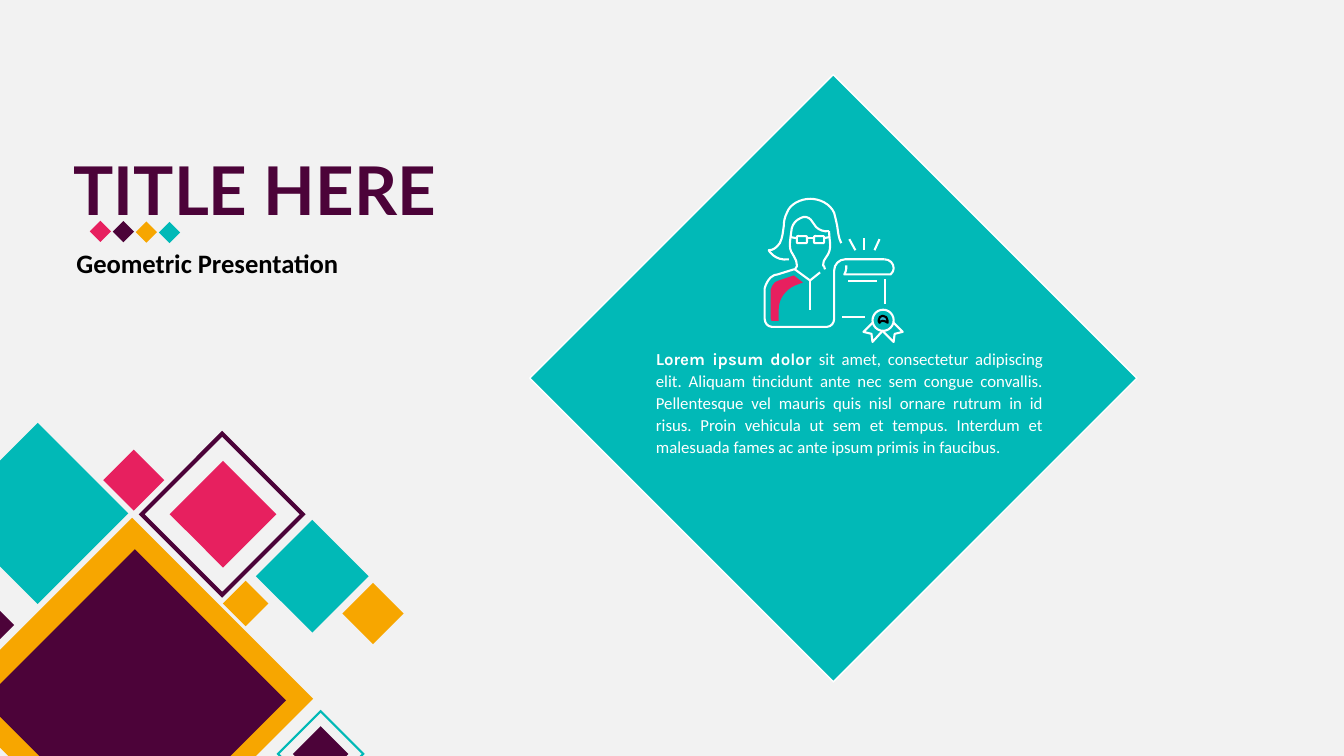
from dataclasses import dataclass

from lxml import etree
from pptx import Presentation
from pptx.dml.color import RGBColor
from pptx.enum.shapes import MSO_CONNECTOR, MSO_SHAPE
from pptx.enum.text import MSO_ANCHOR, MSO_AUTO_SIZE, PP_ALIGN
from pptx.oxml.ns import qn
from pptx.util import Cm, Pt

SQUARE, LENS, MEDAL = MSO_SHAPE.RECTANGLE, MSO_SHAPE.ROUNDED_RECTANGLE, MSO_SHAPE.OVAL
STRAIGHT = MSO_CONNECTOR.STRAIGHT
TOP, GROW = MSO_ANCHOR.TOP, MSO_AUTO_SIZE.SHAPE_TO_FIT_TEXT
LEFT, JUSTIFY = PP_ALIGN.LEFT, PP_ALIGN.JUSTIFY


@dataclass(frozen=True)
class Theme:
    paper: str = "F2F2F2"
    plum: str = "4C0339"
    teal: str = "01B9B7"
    amber: str = "F7A600"
    pink: str = "E7205F"
    white: str = "FFFFFF"
    black: str = "000000"
    seal: str = "35B4CF"
    title_size: float = 48
    subtitle_size: float = 19
    caption_size: float = 12
    hairline: float = 1
    stroke: float = 1.5
    frame: float = 3


THEME = Theme()
ICON_UNITS = 137  # width of the icon's drawing grid
# Icon outlines on the grid: a pair is a corner, six numbers are a Bézier curve
ICON_STROKES = [
    # right side of the face, hair on both sides, collar
    [(64, 32), (64, 37, 65, 42, 65, 46), (65, 51, 64, 54, 61, 58), (59, 60, 58, 63, 58, 66), (59, 67),
     (59, 68, 59, 69, 60, 70)],
    [(45, 0), (55, 0, 65, 5, 69, 14), (70, 18, 71, 22, 72, 27), (73, 33, 73, 38, 76, 44)],
    [(45, 0), (36, 0, 25, 5, 22, 14), (20, 18, 19, 22, 19, 27), (18, 33, 18, 38, 15, 44),
     (12, 48, 9, 51, 4, 51), (4, 51, 10, 62, 24, 60)],
    [(30, 70), (45, 81), (55, 73)],
    # fringe, left side of the face, body and top of the scroll
    [(64, 32), (59, 33, 54, 31, 51, 28), (49, 26, 48, 23, 46, 21), (44, 18, 39, 17, 36, 19),
     (31, 21, 28, 25, 27, 29), (26, 35, 25, 42, 25, 46), (25, 51, 27, 54, 29, 57), (31, 60, 32, 63, 32, 66),
     (32, 67), (31, 68, 31, 69, 30, 70), (29, 70), (13, 75), (11, 75, 8, 76, 6, 78), (3, 81, 1, 85, 0, 89),
     (0, 119), (0, 123, 3, 127, 7, 127), (62, 127), (66, 127, 69, 123, 69, 119), (69, 71),
     (69, 65, 74, 60, 80, 60), (119, 60)],
    # ribbons and scroll
    [(117, 131), (107, 142), (106, 134), (98, 132), (107, 123)],
    [(117, 131), (128, 142), (129, 134), (137, 132), (128, 123)],
    [(119, 60), (124, 60, 128, 64, 128, 69), (128, 71, 127, 73, 125, 75), (79, 75), (80, 73, 81, 71, 81, 69),
     (81, 68, 81, 67, 81, 66)],
]
SEAL = [(117, 121), (119, 121, 121, 122, 122, 123), (122, 121), (122, 118, 120, 116, 117, 116),
        (115, 116, 113, 118, 113, 121), (114, 123), (114, 122, 116, 121, 117, 121)]
SLEEVE = [(14, 81), (13, 81, 12, 82, 10, 83), (8, 85, 7, 87, 6, 90), (6, 119), (6, 120, 7, 121, 7, 121),
          (14, 121), (14, 109), (14, 99, 21, 90, 30, 86), (38, 83), (29, 76)]
ICON_LINES = [(42, 39, 49, 39), (26, 38, 31, 39), (59, 39, 64, 38), (83, 82, 111, 82), (119, 104, 119, 80),
              (99, 51, 99, 39), (109, 51, 114, 40), (90, 51, 84, 40), (77, 117, 100, 117), (45, 81, 45, 110)]
ICON_PRESETS = [(LENS, 32, 37, 10, 7), (LENS, 49, 37, 10, 7), (MEDAL, 107, 110, 21, 21)]


def apply(target, values):
    for name, value in values.items():
        setattr(target, name, value)


def rgb(colour):
    return RGBColor.from_string(colour)


def paint(shape, fill=None, line=None, width=THEME.stroke):
    shape.shadow.inherit = False
    shape.fill.background()
    shape.line.fill.background()
    if fill:
        shape.fill.solid()
        shape.fill.fore_color.rgb = rgb(fill)
    if line:
        shape.line.color.rgb = rgb(line)
        shape.line.width = Pt(width)


def diamond(shapes, x, y, side, fill=None, line=None, width=THEME.stroke):
    """Square on its corner, centred on x, y."""
    tile = shapes.add_shape(SQUARE, Cm(x - side / 2), Cm(y - side / 2), Cm(side), Cm(side))
    tile.rotation = 45
    paint(tile, fill, line, width)
    if line:
        etree.SubElement(tile._element.spPr.find(qn("a:ln")), qn("a:miter"), lim="800000")


def write(frame, runs, size, align=LEFT, spacing=1.0, wrap=False):
    apply(frame, {"word_wrap": wrap, "auto_size": GROW, "vertical_anchor": TOP})
    paragraph = frame.paragraphs[0]
    apply(paragraph, {"alignment": align, "line_spacing": spacing, "space_before": Pt(0)})
    for words, font, bold, colour in runs:
        run = paragraph.add_run()
        run.text = words
        apply(run.font, {"name": font, "size": Pt(size), "bold": bold})
        run.font.color.rgb = rgb(colour)


def bend(outline, steps):
    """Join the three segments of each six-number step into one curve."""
    segments = list(outline._element.iter(qn("a:lnTo")))
    for step in steps[1:]:
        curve, *rest = segments[:len(step) // 2]
        segments = segments[len(step) // 2:]
        if rest:
            curve.tag = qn("a:cubicBezTo")
        for segment in rest:
            curve.append(segment[0])
            segment.getparent().remove(segment)


def add_backdrop(slide, width, height):
    backdrop = slide.shapes.add_shape(SQUARE, 0, 0, width, height)
    paint(backdrop, THEME.paper)
    slide.shapes._spTree.insert(2, backdrop._element)  # behind the placeholders


def add_heading(slide, left, top):
    title, subtitle = slide.placeholders
    apply(title, {"left": Cm(left), "top": Cm(top), "width": Cm(9.98), "height": Cm(2.31)})
    write(title.text_frame, [("TITLE HERE", "Lato", True, THEME.plum)], THEME.title_size)
    apply(subtitle, {"left": Cm(left + 0.07), "top": Cm(top + 2.49), "width": Cm(7.21), "height": Cm(1.07)})
    write(subtitle.text_frame, [("Geometric Presentation", "Calibri", True, THEME.black)], THEME.subtitle_size)
    # Row of small accents
    accents = slide.shapes.add_group_shape().shapes
    for i, colour in enumerate((THEME.pink, THEME.plum, THEME.amber, THEME.teal)):
        diamond(accents, left + 0.93 + 0.58 * i, top + 2.22 + 0.01 * i, 0.38, colour)


def add_corner_pattern(slide, left, top):
    tiles = [
        (3.33, 7.11, 6.45, THEME.amber), (-1.37, 5.25, 2.44, THEME.plum), (0.95, 2.44, 3.23, THEME.teal),
        (5.6, 2.46, 2.87, None, THEME.plum, THEME.frame), (6.19, 4.71, 0.81, THEME.amber),
        (9.4, 4.96, 1.09, THEME.amber), (3.37, 1.6, 1.09, THEME.pink), (7.87, 4.02, 2.01, THEME.teal),
        (8.08, 8.5, 1.52, None, THEME.teal), (8.08, 8.5, 0.99, THEME.plum),
        (3.4, 7.15, 5.28, THEME.plum, THEME.plum, THEME.frame), (5.62, 2.46, 1.9, THEME.pink),
    ]
    pattern = slide.shapes.add_group_shape().shapes
    for x, y, side, *style in tiles:
        diamond(pattern, left + x, top + y, side, *style)


def add_graduate_icon(slide, left, top, width):
    icon = slide.shapes.add_group_shape().shapes
    unit = width / ICON_UNITS

    def place(x, y):
        return Cm(left + x * unit), Cm(top + y * unit)

    def draw(steps, close=False, **style):
        points = [place(x, y) for step in steps for x, y in zip(step[::2], step[1::2])]
        builder = icon.build_freeform(*points[0])
        builder.add_line_segments(points[1:], close=close)
        outline = builder.convert_to_shape()
        bend(outline, steps)
        paint(outline, **style)

    for steps in ICON_STROKES:
        draw(steps, line=THEME.white)
    for kind, x, y, w, h in ICON_PRESETS:
        paint(icon.add_shape(kind, *place(x, y), Cm(w * unit), Cm(h * unit)), line=THEME.white)
    draw(SEAL, close=True, fill=THEME.seal, line=THEME.black)
    for x1, y1, x2, y2 in ICON_LINES:
        stroke = icon.add_connector(STRAIGHT, *place(x1, y1), *place(x2, y2))
        apply(stroke.line, {"width": Pt(THEME.stroke)})
        stroke.line.color.rgb = rgb(THEME.white)
        etree.SubElement(stroke._element.spPr, qn("a:effectLst"))
    draw(SLEEVE, close=True, fill=THEME.pink)


def add_feature_diamond(slide, left, top, size):
    diamond(slide.shapes, left + size / 2, top + size / 2, size / 2 ** 0.5,
            THEME.teal, THEME.white, THEME.hairline)
    add_graduate_icon(slide, left + 5.92, top + 3.13, 3.48)
    caption = slide.shapes.add_textbox(Cm(left + 2.93), Cm(top + 6.73), Cm(10.26), Cm(3.05))
    write(caption.text_frame, [
        ("Lorem ipsum dolor ", "Karla", True, THEME.white),
        ("sit amet, consectetur adipiscing elit. Aliquam tincidunt ante nec sem congue convallis. "
         "Pellentesque vel mauris quis nisl ornare rutrum in id risus. Proin vehicula ut sem et tempus. "
         "Interdum et malesuada fames ac ante ipsum primis in faucibus.", "Calibri", False, THEME.white),
    ], THEME.caption_size, JUSTIFY, 1.1, wrap=True)


def main():
    deck = Presentation()
    apply(deck, {"slide_width": Cm(33.87), "slide_height": Cm(19.05)})
    slide = deck.slides.add_slide(deck.slide_layouts[0])
    add_backdrop(slide, deck.slide_width, deck.slide_height)
    add_corner_pattern(slide, 0, 10.5)
    add_heading(slide, 1.6, 3.61)
    add_feature_diamond(slide, 13.35, 1.88, 15.3)
    deck.save("out.pptx")


if __name__ == "__main__":
    main()
